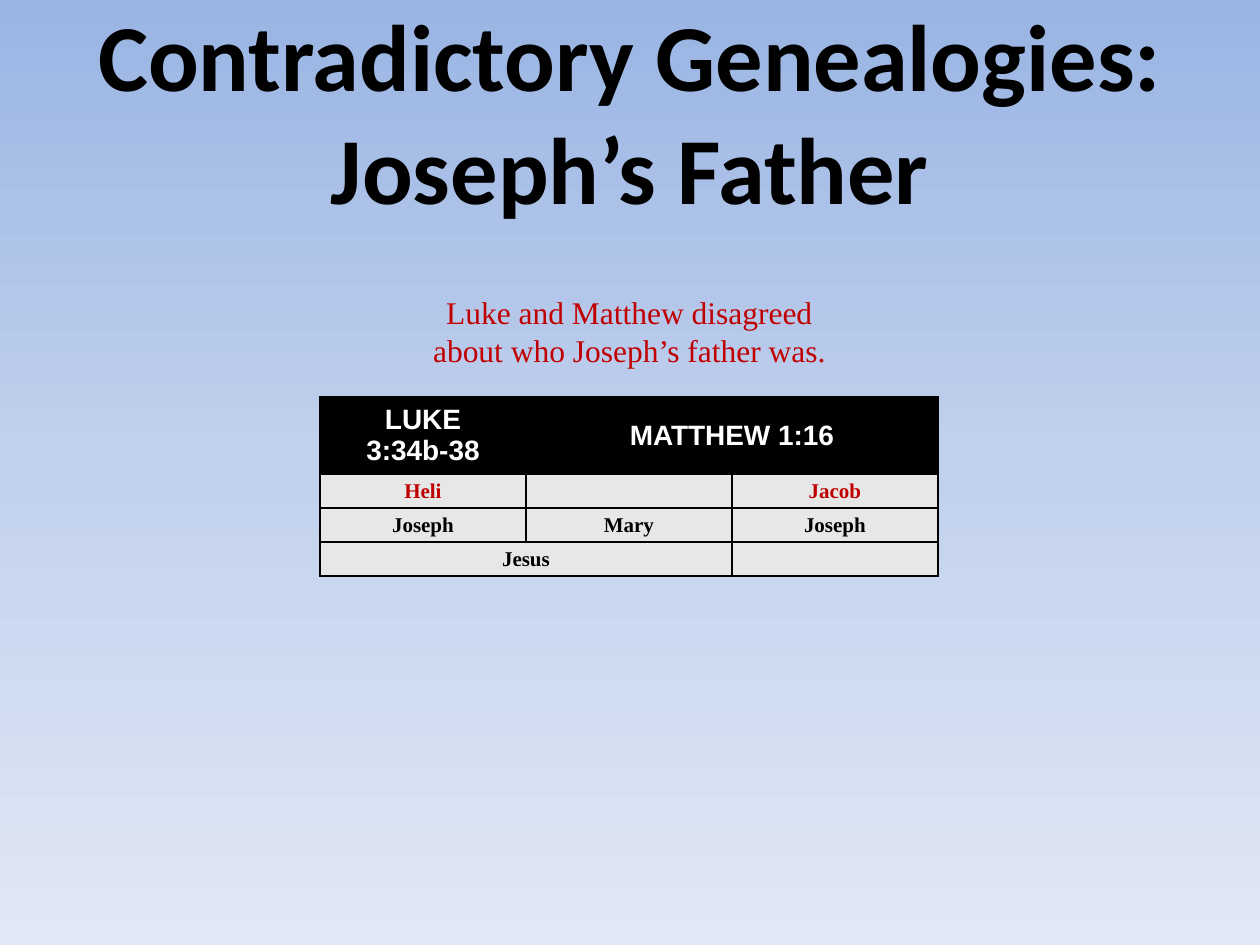
from copy import deepcopy

from lxml import etree
from pptx import Presentation
from pptx.dml.color import RGBColor
from pptx.enum.text import MSO_ANCHOR, PP_ALIGN
from pptx.oxml.ns import qn
from pptx.util import Pt

MIDDLE, TOP = MSO_ANCHOR.MIDDLE, MSO_ANCHOR.TOP
CENTER = PP_ALIGN.CENTER

BLACK = RGBColor(0x00, 0x00, 0x00)
WHITE = RGBColor(0xFF, 0xFF, 0xFF)
RED = RGBColor(0xC0, 0x00, 0x00)
GRAY = RGBColor(0xE7, 0xE7, 0xE7)
BACKGROUND_STOPS = [
    (0, RGBColor(0x9A, 0xB5, 0xE4)),
    (0.5, RGBColor(0xC2, 0xD1, 0xED)),
    (1, RGBColor(0xE1, 0xE8, 0xF5)),
]

TITLE = "Contradictory Genealogies: Joseph’s Father"
SUMMARY = "Luke and Matthew disagreed about who Joseph’s father was."
ROWS = [
    ["LUKE 3:34b-38", "MATTHEW 1:16", ""],
    ["Heli", "", "Jacob"],
    ["Joseph", "Mary", "Joseph"],
    ["Jesus", "", ""],
]
MERGES = [((0, 1), (0, 2)), ((3, 0), (3, 1))]
FATHERS = ("Heli", "Jacob")

SLIDE_SIZE = (1260, 945)
TITLE_BOX = (0, 0, 1260, 220)
SUMMARY_BOX = (414, 287, 431, 90)
TABLE_LEFT, TABLE_TOP = 320, 397
COLUMN_WIDTH, HEADER_HEIGHT, ROW_HEIGHT = 206, 74, 34
HEADER_MARGIN, BODY_MARGIN = 5, 1


def px(length):
    return round(length * 914400 / 126)


def write(text_frame, text, size, font_name, color, bold):
    text_frame.text = text
    paragraph = text_frame.paragraphs[0]
    paragraph.alignment = CENTER
    for run in paragraph.runs:
        font = run.font
        font.size, font.name, font.bold = Pt(size), font_name, bold
        font.color.rgb = color
    if not text:
        paragraph._p.get_or_add_endParaRPr().set("sz", str(size * 100))


def add_text(slide, box, anchor, *style):
    text_frame = slide.shapes.add_textbox(*map(px, box)).text_frame
    text_frame.word_wrap = True
    text_frame.vertical_anchor = anchor
    write(text_frame, *style)


def paint_background(slide):
    fill = slide.background.fill
    fill.gradient()
    fill.gradient_angle = 270
    first_stop = fill.gradient_stops[0]._gs
    first_stop.addnext(deepcopy(first_stop))
    for stop, (position, color) in zip(fill.gradient_stops, BACKGROUND_STOPS):
        stop.position = position
        stop.color.rgb = color


def add_borders(cell):
    """Put a 1 pt black line on all four sides, ahead of the cell's fill."""
    properties = cell._tc.get_or_add_tcPr()
    for index, side in enumerate(("lnL", "lnR", "lnT", "lnB")):
        line = etree.Element(qn(f"a:{side}"), w=str(Pt(1)))
        solid = etree.SubElement(line, qn("a:solidFill"))
        etree.SubElement(solid, qn("a:srgbClr"), val=str(BLACK))
        properties.insert(index, line)


def format_cell(cell, text, is_header):
    cell.fill.solid()
    cell.fill.fore_color.rgb = BLACK if is_header else GRAY
    cell.vertical_anchor = MIDDLE
    margin = px(HEADER_MARGIN if is_header else BODY_MARGIN)
    cell.margin_left = cell.margin_right = margin
    cell.margin_top = cell.margin_bottom = margin
    if is_header:
        write(cell.text_frame, text, 16, "Arial", WHITE, True)
    else:
        color = RED if text in FATHERS else BLACK
        write(cell.text_frame, text, 12, "Times New Roman", color, True)
    add_borders(cell)


def add_genealogy_table(slide):
    heights = [HEADER_HEIGHT] + [ROW_HEIGHT] * (len(ROWS) - 1)
    column_count = len(ROWS[0])
    table = slide.shapes.add_table(
        len(ROWS), column_count, px(TABLE_LEFT), px(TABLE_TOP),
        px(COLUMN_WIDTH * column_count), px(sum(heights))).table
    for column in table.columns:
        column.width = px(COLUMN_WIDTH)
    for row_index, (texts, height) in enumerate(zip(ROWS, heights)):
        table.rows[row_index].height = px(height)
        for column_index, text in enumerate(texts):
            format_cell(table.cell(row_index, column_index), text, row_index == 0)
    for start, end in MERGES:
        table.cell(*start).merge(table.cell(*end))


def main():
    presentation = Presentation()
    presentation.slide_width, presentation.slide_height = map(px, SLIDE_SIZE)
    slide = presentation.slides.add_slide(presentation.slide_layouts[6])
    paint_background(slide)
    add_text(slide, TITLE_BOX, MIDDLE, TITLE, 54, "Calibri", BLACK, True)
    add_genealogy_table(slide)
    add_text(slide, SUMMARY_BOX, TOP, SUMMARY, 18, "Times New Roman", RED, False)
    presentation.save("out.pptx")


if __name__ == "__main__":
    main()
